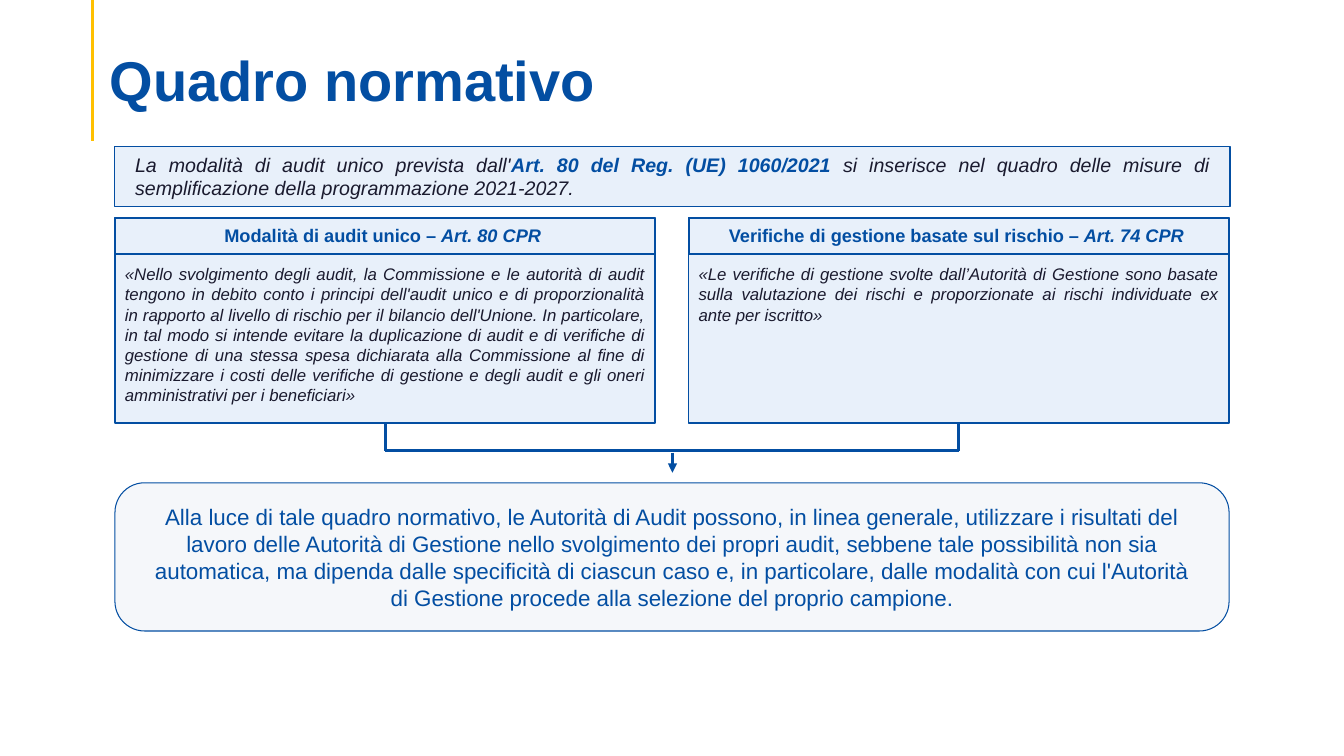
from dataclasses import dataclass

from lxml import etree
from pptx import Presentation
from pptx.dml.color import RGBColor
from pptx.enum.shapes import MSO_CONNECTOR, MSO_SHAPE
from pptx.enum.text import MSO_ANCHOR, MSO_AUTO_SIZE, PP_ALIGN
from pptx.oxml.ns import qn
from pptx.util import Inches, Pt

RECT, ROUND = MSO_SHAPE.RECTANGLE, MSO_SHAPE.ROUNDED_RECTANGLE
STRAIGHT = MSO_CONNECTOR.STRAIGHT
LEFT, CENTER, JUSTIFY = PP_ALIGN.LEFT, PP_ALIGN.CENTER, PP_ALIGN.JUSTIFY
TOP, MIDDLE, BOTTOM = MSO_ANCHOR.TOP, MSO_ANCHOR.MIDDLE, MSO_ANCHOR.BOTTOM
GROW = MSO_AUTO_SIZE.SHAPE_TO_FIT_TEXT
BOTTOM_SIDE = 2


@dataclass(frozen=True)
class Theme:
    font: str = "Arial"
    blue: str = "034EA2"
    ink: str = "1A1A2E"
    pale: str = "E8F0FA"
    mist: str = "F5F7FA"
    gold: str = "FFC000"
    title: float = 40
    conclusion: float = 16
    intro: float = 14
    heading: float = 13
    quote: float = 12


class SlideBuilder:
    def __init__(self, slide, theme):
        self.s, self.theme = slide, theme

    def box(self, at, fill=None, width=0.75, kind=RECT, parent=None):
        """Outlined shape, filled or hollow."""
        shapes = (parent or self.s).shapes
        sp = shapes.add_shape(kind, *map(Inches, at))
        sp.shadow.inherit = False
        if fill:
            sp.fill.solid()
            sp.fill.fore_color.rgb = RGBColor.from_string(fill)
        else:
            sp.fill.background()
        sp.line.color.rgb = RGBColor.from_string(self.theme.blue)
        sp.line.width = Pt(width)
        return sp

    def fill_text(self, sp, runs, size, align, anchor=TOP, insets=(0.1, 0.05, 0.1, 0.05)):
        """One paragraph of (text, colour, bold, italic) runs."""
        tf = sp.text_frame
        tf.word_wrap = True
        tf.vertical_anchor = anchor
        tf.margin_left, tf.margin_top, tf.margin_right, tf.margin_bottom = map(Inches, insets)
        p = tf.paragraphs[0]
        p.alignment = align
        for text, color, bold, italic in runs:
            r = p.add_run()
            r.text = text
            r.font.name, r.font.size = self.theme.font, Pt(size)
            r.font.bold, r.font.italic = bold, italic
            r.font.color.rgb = RGBColor.from_string(color)
        return tf

    def label(self, at, runs, size, align, parent=None, **layout):
        sp = (parent or self.s).shapes.add_textbox(*map(Inches, at))
        return self.fill_text(sp, runs, size, align, **layout)

    def line(self, start, end, color, arrow=False):
        cx = self.s.shapes.add_connector(STRAIGHT, *map(Inches, start + end))
        cx.line.color.rgb = RGBColor.from_string(color)
        cx.line.width = Pt(2.25)
        spPr = cx._element.spPr
        if arrow:
            etree.SubElement(spPr.find(qn("a:ln")), qn("a:tailEnd"), type="triangle")
        etree.SubElement(spPr, qn("a:effectLst"))
        return cx

    def card(self, x, y, w, h, heading, article, quote):
        """Panel with a quotation under a framed heading."""
        t = self.theme
        panel = self.box((x, y, w, h), t.pale, 1.2)
        self.label((x, y + 0.41, w, 1.47), [(quote, t.ink, False, True)], t.quote, JUSTIFY)
        header = self.s.shapes.add_group_shape()
        self.box((x, y, w, 0.36), width=1.5, parent=header)
        runs = [(heading, t.blue, True, False), (article, t.blue, True, True)]
        tf = self.label((x, y + 0.02, w, 0.32), runs, t.heading, CENTER, parent=header)
        tf.auto_size = GROW
        return panel


CARDS = [
    ("Modalità di audit unico – ", "Art. 80 CPR ",
     "«Nello svolgimento degli audit, la Commissione e le autorità di audit tengono in debito "
     "conto i principi dell'audit unico e di proporzionalità in rapporto al livello di rischio "
     "per il bilancio dell'Unione. In particolare, in tal modo si intende evitare la "
     "duplicazione di audit e di verifiche di gestione di una stessa spesa dichiarata alla "
     "Commissione al fine di minimizzare i costi delle verifiche di gestione e degli audit e "
     "gli oneri amministrativi per i beneficiari»"),
    ("Verifiche di gestione basate sul rischio – ", "Art. 74 CPR ",
     "«Le verifiche di gestione svolte dall’Autorità di Gestione sono basate sulla valutazione "
     "dei rischi e proporzionate ai rischi individuate ex ante per iscritto»"),
]
CONCLUSION = (
    "Alla luce di tale quadro normativo, le Autorità di Audit possono, in linea generale, "
    "utilizzare i risultati del lavoro delle Autorità di Gestione nello svolgimento dei propri "
    "audit, sebbene tale possibilità non sia automatica, ma dipenda dalle specificità di "
    "ciascun caso e, in particolare, dalle modalità con cui l'Autorità di Gestione procede "
    "alla selezione del proprio campione."
)


def main():
    prs = Presentation()
    prs.slide_width, prs.slide_height = Inches(13.33), Inches(7.5)
    t = Theme()
    b = SlideBuilder(prs.slides.add_slide(prs.slide_layouts[6]), t)
    left = 1.14

    # Title with its accent rule
    b.line((0.92, 0), (0.92, 1.4), t.gold)
    tf = b.label((0.99, 0.27, 11.96, 0.86), [("Quadro normativo", t.blue, True, False)],
                 t.title, LEFT, anchor=BOTTOM, insets=(0.1, 0.05, 0.1, 0))
    tf.paragraphs[0].line_spacing = 0.9

    # Introduction
    intro = b.box((left, 1.45, 11.06, 0.6), t.pale)
    b.fill_text(intro, [
        ("La modalità di audit unico prevista dall'", t.ink, False, True),
        ("Art. 80 del Reg. (UE) 1060/2021", t.blue, True, True),
        (" si inserisce nel quadro delle misure di semplificazione della programmazione "
         "2021-2027.", t.ink, False, True),
    ], t.intro, JUSTIFY, MIDDLE, (0.2, 0.11, 0.2, 0.11))

    # Conclusion
    conclusion = b.box((left, 4.79, 11.05, 1.47), t.mist, kind=ROUND)
    conclusion.adjustments[0] = 0.2
    b.fill_text(conclusion, [(CONCLUSION, t.blue, False, False)], t.conclusion, CENTER,
                MIDDLE, (0.2, 0.09, 0.2, 0.09))

    # Two cards, each with a drop line down to the bracket
    top, width, height, pitch, bracket = 2.16, 5.36, 2.04, 5.69, 4.47
    centers = [left + i * pitch + width / 2 for i in range(len(CARDS))]
    panels = [b.card(left + i * pitch, top, width, height, *card)
              for i, card in enumerate(CARDS)]
    for panel, x in zip(panels, centers):
        drop = b.line((x, top + height), (x, bracket), t.blue)
        drop.begin_connect(panel, BOTTOM_SIDE)

    # Bracket and arrow to the conclusion
    b.line((centers[0], bracket), (centers[1], bracket), t.blue)
    b.line((6.67, 4.49), (6.67, 4.69), t.blue, arrow=True)

    prs.save("out.pptx")


if __name__ == "__main__":
    main()
